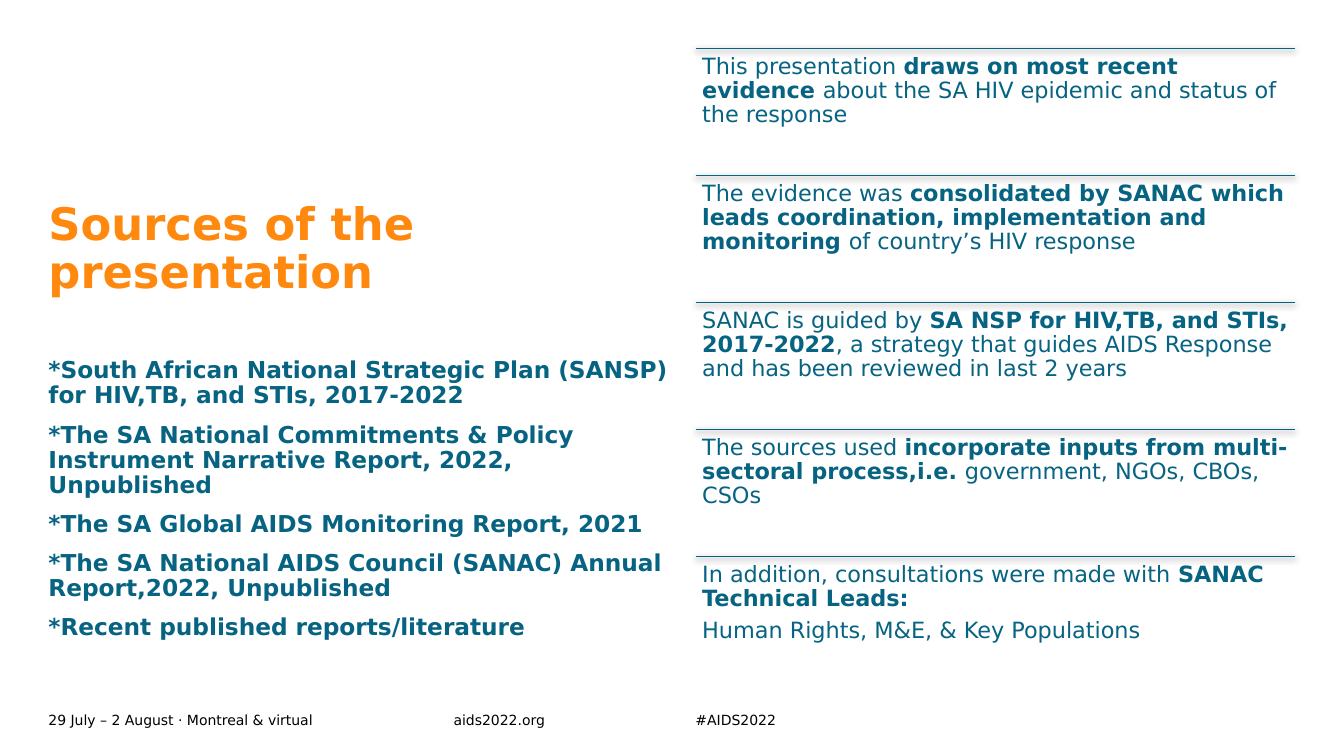
from lxml.etree import SubElement
from pptx import Presentation
from pptx.dml.color import RGBColor
from pptx.enum.shapes import MSO_CONNECTOR
from pptx.enum.text import MSO_ANCHOR, MSO_AUTO_SIZE, PP_ALIGN
from pptx.oxml.ns import qn
from pptx.util import Pt

FONT = "DejaVu Sans"
COLORS = {"title": "FF890E", "body": "076382", "footer": "000000", "shadow": "000000"}

REFERENCES = [
    "*South African National Strategic Plan (SANSP) for HIV,TB, and STIs, 2017-2022",
    "*The SA National Commitments & Policy Instrument Narrative Report, 2022, Unpublished",
    "*The SA Global AIDS Monitoring Report, 2021",
    "*The SA National AIDS Council (SANAC) Annual Report,2022, Unpublished",
    "*Recent published reports/literature",
]

STATEMENTS = [
    [[("This presentation ", False), ("draws on most recent evidence ", True),
      ("about the SA HIV epidemic and status of the response", False)]],
    [[("The evidence was ", False),
      ("consolidated by SANAC which leads coordination, implementation and monitoring ", True),
      ("of country’s HIV response", False)]],
    [[("SANAC is guided by ", False), ("SA NSP for HIV,TB, and STIs, 2017-2022", True),
      (", a strategy that guides AIDS Response and has been reviewed in last 2 years", False)]],
    [[("The sources used ", False),
      ("incorporate inputs from multi-sectoral process,i.e. ", True),
      ("government, NGOs, CBOs, CSOs", False)]],
    [[("In addition, consultations were made with ", False), ("SANAC Technical Leads:", True)],
     [("Human Rights, M&E, & Key Populations", False)]],
]

FOOTER = [("29 July – 2 August · Montreal & virtual", 0, 289.4),
          ("aids2022.org", 289.4, 139), ("#AIDS2022", 462.2, 139)]


def set_frame(shape, inset=0, anchor=MSO_ANCHOR.TOP):
    frame = shape.text_frame
    frame.word_wrap = True
    frame.auto_size = MSO_AUTO_SIZE.NONE
    frame.vertical_anchor = anchor
    frame.margin_left = frame.margin_right = Pt(inset)
    frame.margin_top = frame.margin_bottom = Pt(inset)
    return frame


def add_text(slide, left, top, width, height, **frame_options):
    box = slide.shapes.add_textbox(Pt(left), Pt(top), Pt(width), Pt(height))
    return set_frame(box, **frame_options)


def next_paragraph(frame, index):
    return frame.add_paragraph() if index else frame.paragraphs[0]


def style(paragraph, size, color, bold=None, line_spacing=0.9):
    paragraph.alignment = PP_ALIGN.LEFT
    paragraph.line_spacing = line_spacing
    font = paragraph.font
    font.name, font.size, font.bold = FONT, Pt(size), bold
    font.color.rgb = RGBColor.from_string(COLORS[color])


def add_title(slide, left, top, width, height):
    title = slide.shapes.title
    title.left, title.top, title.width, title.height = map(Pt, (left, top, width, height))
    frame = set_frame(title, anchor=MSO_ANCHOR.BOTTOM)
    frame.text = "Sources of the presentation"
    style(frame.paragraphs[0], 32, "title", bold=True)


def add_references(slide, left, top, width, height):
    frame = add_text(slide, left, top, width, height)
    for index, reference in enumerate(REFERENCES):
        paragraph = next_paragraph(frame, index)
        paragraph.text = reference
        paragraph.space_before = Pt(10 if index else 0)
        style(paragraph, 16.6, "body", bold=True)


def add_divider(slide, left, top, width):
    divider = slide.shapes.add_connector(
        MSO_CONNECTOR.STRAIGHT, Pt(left), Pt(top), Pt(left + width), Pt(top))
    divider.line.width = Pt(0.5)
    divider.line.color.rgb = RGBColor.from_string(COLORS["body"])
    effects = SubElement(divider._element.spPr, qn("a:effectLst"))
    shadow = SubElement(effects, qn("a:outerShdw"), blurRad=str(Pt(4.5)), dist=str(Pt(1.5)),
                        dir="5400000", algn="ctr", rotWithShape="0")
    shade = SubElement(shadow, qn("a:srgbClr"), val=COLORS["shadow"])
    SubElement(shade, qn("a:alpha"), val="63000")


def add_statements(slide, left, top, width, height):
    row_height = height / len(STATEMENTS)
    for row, statement in enumerate(STATEMENTS):
        row_top = top + row * row_height
        add_divider(slide, left, row_top, width)
        frame = add_text(slide, left, row_top, width, row_height, inset=4.8)
        for index, runs in enumerate(statement):
            paragraph = next_paragraph(frame, index)
            paragraph.space_after = Pt(5.6)
            style(paragraph, 16, "body")
            for text, bold in runs:
                run = paragraph.add_run()
                run.text, run.font.bold = text, bold


def add_footer(slide, left, top, height):
    for text, offset, width in FOOTER:
        frame = add_text(slide, left + offset, top, width, height, anchor=MSO_ANCHOR.MIDDLE)
        frame.text = text
        style(frame.paragraphs[0], 10, "footer", line_spacing=1.0)


def main():
    deck = Presentation()
    deck.slide_width, deck.slide_height = Pt(960), Pt(540)
    slide = deck.slides.add_slide(deck.slide_layouts[5])
    add_footer(slide, 34.6, 505.4, 17.3)
    add_references(slide, 34.6, 256.3, 445, 206.6)
    add_title(slide, 34.6, 131, 428.4, 82.1)
    add_statements(slide, 496.8, 34.6, 428.4, 453.6)
    deck.save("out.pptx")


if __name__ == "__main__":
    main()
